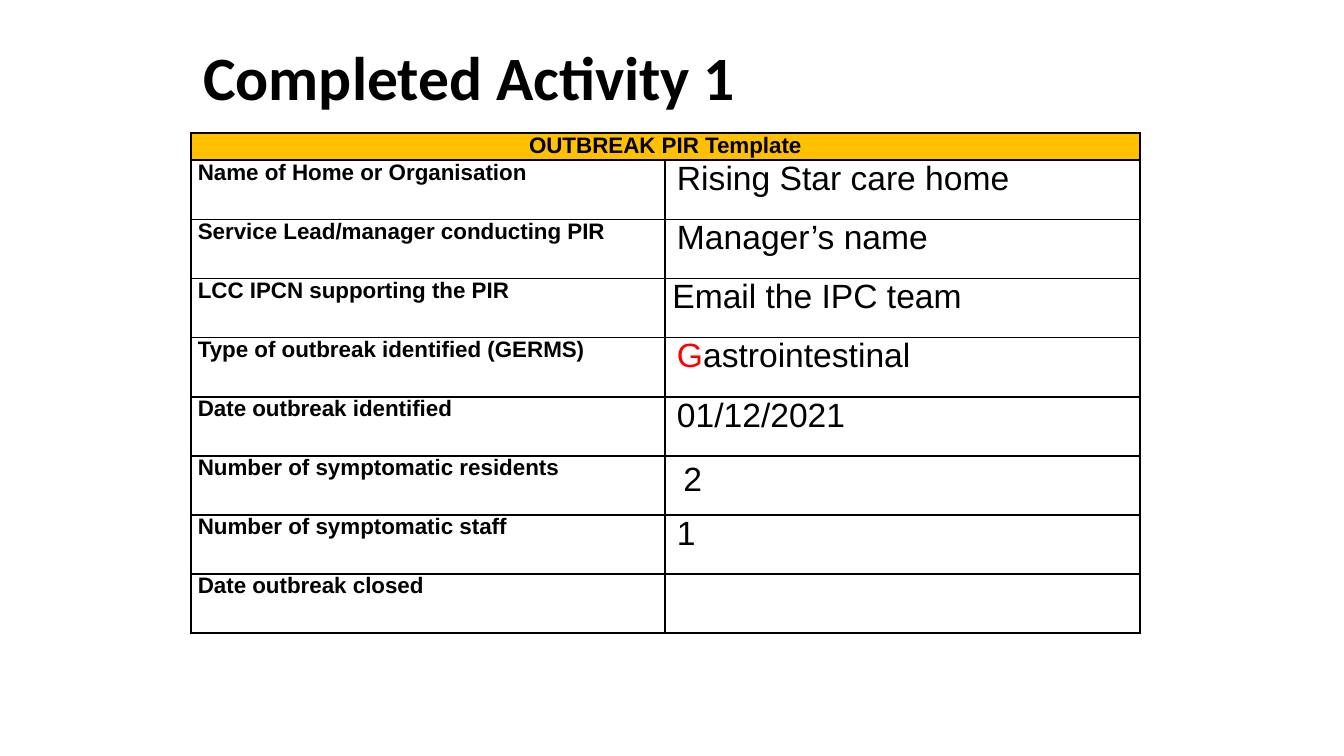
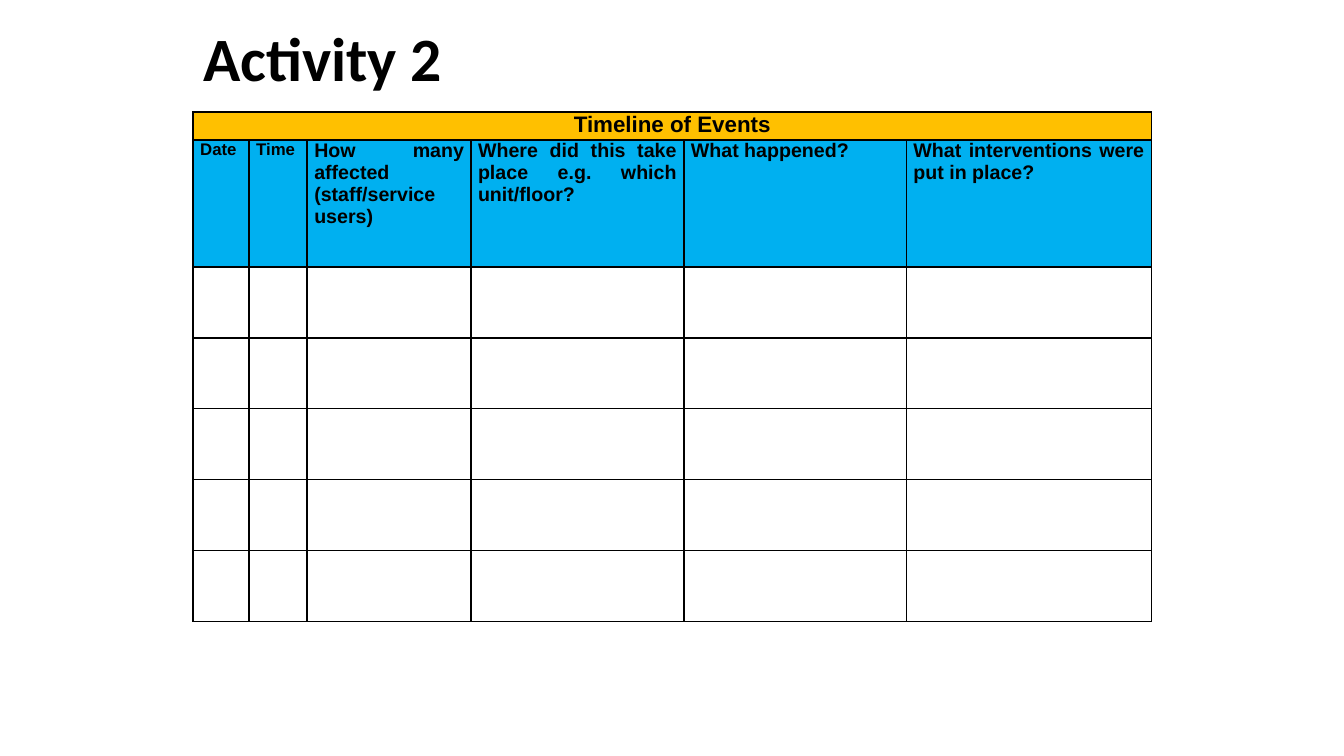
"""Build the two outbreak review activity slides."""
from lxml import etree
from pptx import Presentation
from pptx.dml.color import RGBColor
from pptx.enum.text import MSO_ANCHOR, PP_ALIGN
from pptx.oxml.ns import qn
from pptx.util import Pt

LEFT, CENTER, JUSTIFY = PP_ALIGN.LEFT, PP_ALIGN.CENTER, PP_ALIGN.JUSTIFY
MIDDLE = MSO_ANCHOR.MIDDLE
COLORS = {"ink": "000000", "paper": "FFFFFF", "banner": "FFC000",
          "heading": "00B0F0", "accent": "FF0000"}
TITLE_FONT, BODY_FONT = "Calibri", "Arial"
TITLE_ONLY = 5
CELL_INSET = 5
BORDER_WIDTH = 1.5
VALUE_INDENT = 3.3
BANNER_HEIGHT = 19.4

OUTBREAK_FIELDS = [
    ("Name of Home or Organisation", "Rising Star care home", VALUE_INDENT, 0),
    ("Service Lead/manager conducting PIR", "Manager’s name", VALUE_INDENT, 0),
    ("LCC IPCN supporting the PIR", "Email the IPC team", 0, 0),
    ("Type of outbreak identified (GERMS)", "Gastrointestinal", VALUE_INDENT, 0),
    ("Date outbreak identified", "01/12/2021", VALUE_INDENT, 0),
    ("Number of symptomatic residents", "2", 7.8, 3.6),
    ("Number of symptomatic staff", "1", VALUE_INDENT, 0),
    ("Date outbreak closed", "", 0, 0),
]
TIMELINE_COLUMNS = [
    ("Date", 40, 12),
    ("Time", 41.5, 12),
    ("How many affected (staff/service users)", 117, 14),
    ("Where did this take place e.g. which unit/floor?", 152, 14),
    ("What happened?", 159, 14),
    ("What interventions were put in place?", 175, 14),
]


def rgb(name):
    """Return the named colour."""
    return RGBColor.from_string(COLORS[name])


def add_span(para, text, size, font=BODY_FONT, bold=False, color="ink"):
    """Add one formatted run to a paragraph."""
    span = para.add_run()
    span.text = text
    span.font.name = font
    span.font.size = Pt(size)
    span.font.bold = bold
    span.font.color.rgb = rgb(color)


def add_page(deck, title, top):
    """Add a slide with the shared title style."""
    page = deck.slides.add_slide(deck.slide_layouts[TITLE_ONLY])
    box = page.shapes.title
    box.left, box.top, box.width, box.height = Pt(138), Pt(top), Pt(676), Pt(75)
    box.text_frame.vertical_anchor = MIDDLE
    para = box.text_frame.paragraphs[0]
    para.alignment = LEFT
    para.line_spacing = 0.9
    add_span(para, title, 44, TITLE_FONT, True)
    return page


def add_borders(cell):
    """Draw the same line on all four sides of a cell."""
    properties = cell._tc.get_or_add_tcPr()
    for index, side in enumerate(("lnL", "lnR", "lnT", "lnB")):
        line = etree.Element(qn(f"a:{side}"), w=str(Pt(BORDER_WIDTH)))
        fill = etree.SubElement(line, qn("a:solidFill"))
        etree.SubElement(fill, qn("a:srgbClr"), val=COLORS["ink"])
        properties.insert(index, line)


def fill_cell(cell, color):
    """Give a cell a solid fill."""
    cell.fill.solid()
    cell.fill.fore_color.rgb = rgb(color)


def start_text(cell, alignment=JUSTIFY, indent=0, drop=0):
    """Set the insets of a cell and return its first paragraph."""
    cell.margin_left, cell.margin_right = Pt(CELL_INSET + indent), Pt(CELL_INSET)
    cell.margin_top, cell.margin_bottom = Pt(drop), Pt(0)
    para = cell.text_frame.paragraphs[0]
    para.alignment = alignment
    return para


def add_grid(page, left, top, widths, heights, banner):
    """Add a bordered table whose first row is a merged banner."""
    frame = page.shapes.add_table(len(heights), len(widths), Pt(left), Pt(top),
                                  Pt(sum(widths)), Pt(sum(heights)))
    table = frame.table
    table.first_row = table.horz_banding = False
    for column, width in zip(table.columns, widths):
        column.width = Pt(width)
    for row, height in zip(table.rows, heights):
        row.height = Pt(height)
    for cell in table.iter_cells():
        fill_cell(cell, "paper")
        add_borders(cell)
    heading = table.cell(0, 0)
    heading.merge(table.cell(0, len(widths) - 1))
    fill_cell(heading, "banner")
    add_span(start_text(heading, CENTER), banner, 16, bold=True)
    return table


def add_outbreak_page(deck):
    """Add the completed outbreak form."""
    page = add_page(deck, "Completed Activity 1", 20)
    heights = [BANNER_HEIGHT] + [42.2] * len(OUTBREAK_FIELDS)
    table = add_grid(page, 136.3, 95.2, [339, 339], heights, "OUTBREAK PIR Template")
    for row, (label, value, indent, drop) in enumerate(OUTBREAK_FIELDS, 1):
        add_span(start_text(table.cell(row, 0)), label, 16, bold=True)
        if not value:
            continue
        para = start_text(table.cell(row, 1), indent=indent, drop=drop)
        if "GERMS" in label:
            add_span(para, value[0], 24, color="accent")
            value = value[1:]
        add_span(para, value, 24)


def add_timeline_page(deck):
    """Add the blank timeline of events."""
    page = add_page(deck, "Activity 2", 6.5)
    widths = [width for _, width, _ in TIMELINE_COLUMNS]
    heights = [BANNER_HEIGHT + 0.6, 90.5] + [50.7] * 5
    table = add_grid(page, 138, 80, widths, heights, "Timeline of Events")
    for column, (label, _, size) in enumerate(TIMELINE_COLUMNS):
        cell = table.cell(1, column)
        fill_cell(cell, "heading")
        add_span(start_text(cell), label, size, bold=True)


def main():
    """Build and save the deck."""
    deck = Presentation()
    deck.slide_width, deck.slide_height = Pt(960), Pt(540)
    add_outbreak_page(deck)
    add_timeline_page(deck)
    deck.save("out.pptx")


if __name__ == "__main__":
    main()
